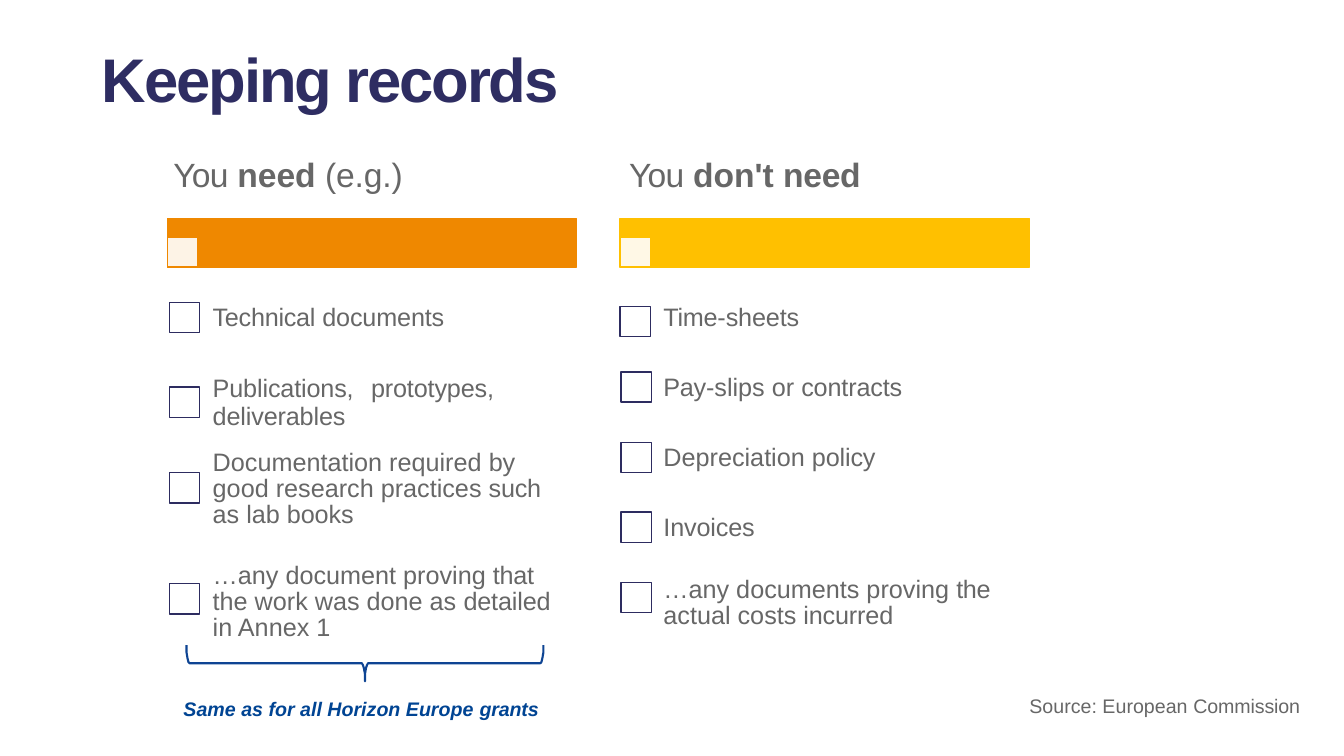
from lxml.etree import SubElement
from pptx import Presentation
from pptx.dml.color import RGBColor
from pptx.enum.shapes import MSO_SHAPE as Preset
from pptx.oxml.ns import qn
from pptx.util import Inches, Pt

NAVY, OUTLINE, GREY, BLUE = "2E2D62", "2D2C60", "676767", "004493"
ORANGE, YELLOW = "EF8800", "FFC000"


def rectangle(left, top, width, height, line, fill=None):
    shape = slide.shapes.add_shape(Preset.RECTANGLE, Inches(left), Inches(top), Inches(width), Inches(height))
    shape.shadow.inherit = False
    if fill:
        shape.fill.solid()
        shape.fill.fore_color.rgb = RGBColor.from_string(fill)
    else:
        shape.fill.background()
    shape.line.color.rgb = RGBColor.from_string(line)
    shape.line.width = Pt(1)
    return shape


def write(left, top, width, height, lines, size=18, color=GREY, inset=0.03, bold=False, italic=False):
    box = slide.shapes.add_textbox(Inches(left), Inches(top), Inches(width), Inches(height))
    frame = box.text_frame
    frame.word_wrap = True
    frame.margin_left, frame.margin_top = Inches(0.01), Inches(inset)
    frame.margin_right = frame.margin_bottom = 0
    for index, spans in enumerate(lines):
        para = frame.add_paragraph() if index else frame.paragraphs[0]
        for text, spacing, *emphasis in spans:
            span = para.add_run()
            span.text = text
            span.font.name = "Arial"
            span.font.size = Pt(size)
            span.font.bold = emphasis[0] if emphasis else bold
            span.font.italic = italic
            span.font.color.rgb = RGBColor.from_string(color)
            span._r.get_or_add_rPr().set("spc", str(round(spacing * 100)))
    return frame.paragraphs


deck = Presentation()
deck.slide_width, deck.slide_height = Inches(13.33), Inches(7.5)
slide = deck.slides.add_slide(deck.slide_layouts[6])

write(1, 0.38, 9.69, 0.75, [[("Keeping records", -1.5)]], 44, NAVY, bold=True)

columns = [
    (1.66, ORANGE, 1.71, [("You ", -0.5), ("need ", 0, True), ("(e.g.)", -0.1)]),
    (6.15, YELLOW, 6.23, [("You ", -0.5), ("don't ", 0, True), ("need", -0.2, True)]),
]
for left, color, heading_left, heading in columns:
    rectangle(left, 2.17, 4.06, 0.48, color, color)
    square = rectangle(left, 2.35, 0.3, 0.3, color, "FFFFFF")
    white = square.fill._xPr.find(qn("a:solidFill"))[0]
    SubElement(white, qn("a:alpha"), val="90000")
    write(heading_left, 1.5, 2.35, 0.43, [heading], 24)

checkboxes = [(1.68, top) for top in (3, 3.84, 4.69, 5.79)]
checkboxes += [(6.15, 3.04)] + [(6.16, top) for top in (3.69, 4.39, 5.08, 5.78)]
for left, top in checkboxes:
    rectangle(left, top, 0.3, 0.3, OUTLINE)

write(2.1, 2.96, 2.36, 0.33, [[("Technical ", -0.2), ("documents", -0.1)]])

publications, deliverables, documentation = write(2.1, 3.68, 3.29, 1.57, [
    [("Publications,\tprototypes,", -0.1)],
    [("deliverables", -0.1)],
    [("Documentation required ", 0), ("by ", -0.2), ("good research practices ", 0),
     ("such ", -0.2), ("as lab ", 0), ("books", -0.1)],
])
tabs = SubElement(publications._p.get_or_add_pPr(), qn("a:tabLst"))
SubElement(tabs, qn("a:tab"), pos=str(Inches(1.57)), algn="l")
publications.line_spacing = deliverables.line_spacing = Pt(20.1)
documentation.line_spacing = 0.86
documentation.space_before = Pt(14.4)

work_proof = write(2.1, 5.49, 3.39, 0.85, [[
    ("…any document proving ", 0), ("that ", -0.2), ("the work was done as ", 0),
    ("detailed ", -0.1), ("in Annex ", 0), ("1", -0.5)]], inset=0.1)
work_proof[0].line_spacing = 0.86

not_needed = [
    (2.96, [("Time-", -0.2), ("sheets", -0.1)]),
    (3.65, [("Pay-", -0.2), ("slips or ", 0), ("contracts", -0.1)]),
    (4.35, [("Depreciation ", 0), ("policy", -0.1)]),
    (5.04, [("Invoices", -0.1)]),
]
for top, spans in not_needed:
    write(6.57, top, 2.42, 0.33, [spans])

cost_proof = write(6.57, 5.61, 3.28, 0.59, [[
    ("…any documents proving ", 0), ("the ", -0.2), ("actual costs", 0), (" incurred", -0.1)]], inset=0.12)
cost_proof[0].line_spacing = Pt(18.7)

center = 3.62
half = [(1.77, 6.4), (1.77, 6.47), (1.76, 6.53), (1.75, 6.57), (1.74, 6.58),
        (0.03, 6.58), (0.02, 6.6), (0.01, 6.63), (0, 6.69), (0, 6.76)]
outline = [(center + x, y) for x, y in half] + [(center - x, y) for x, y in half[-2::-1]]
points = [(Inches(x), Inches(y)) for x, y in outline]
builder = slide.shapes.build_freeform(*points[0])
builder.add_line_segments(points[1:], close=False)
brace = builder.convert_to_shape()
brace.shadow.inherit = False
brace.fill.background()
brace.line.color.rgb = RGBColor.from_string("0E4493")
brace.line.width = Pt(1.5)

write(1.81, 6.88, 3.6, 0.26, [[("Same as for all Horizon Europe ", 0), ("grants", -0.1)]],
      14, BLUE, bold=True, italic=True)
write(10.2, 6.85, 2.75, 0.26, [[("Source: European ", 0), ("Commission", -0.1)]], 14)

deck.save("out.pptx")
